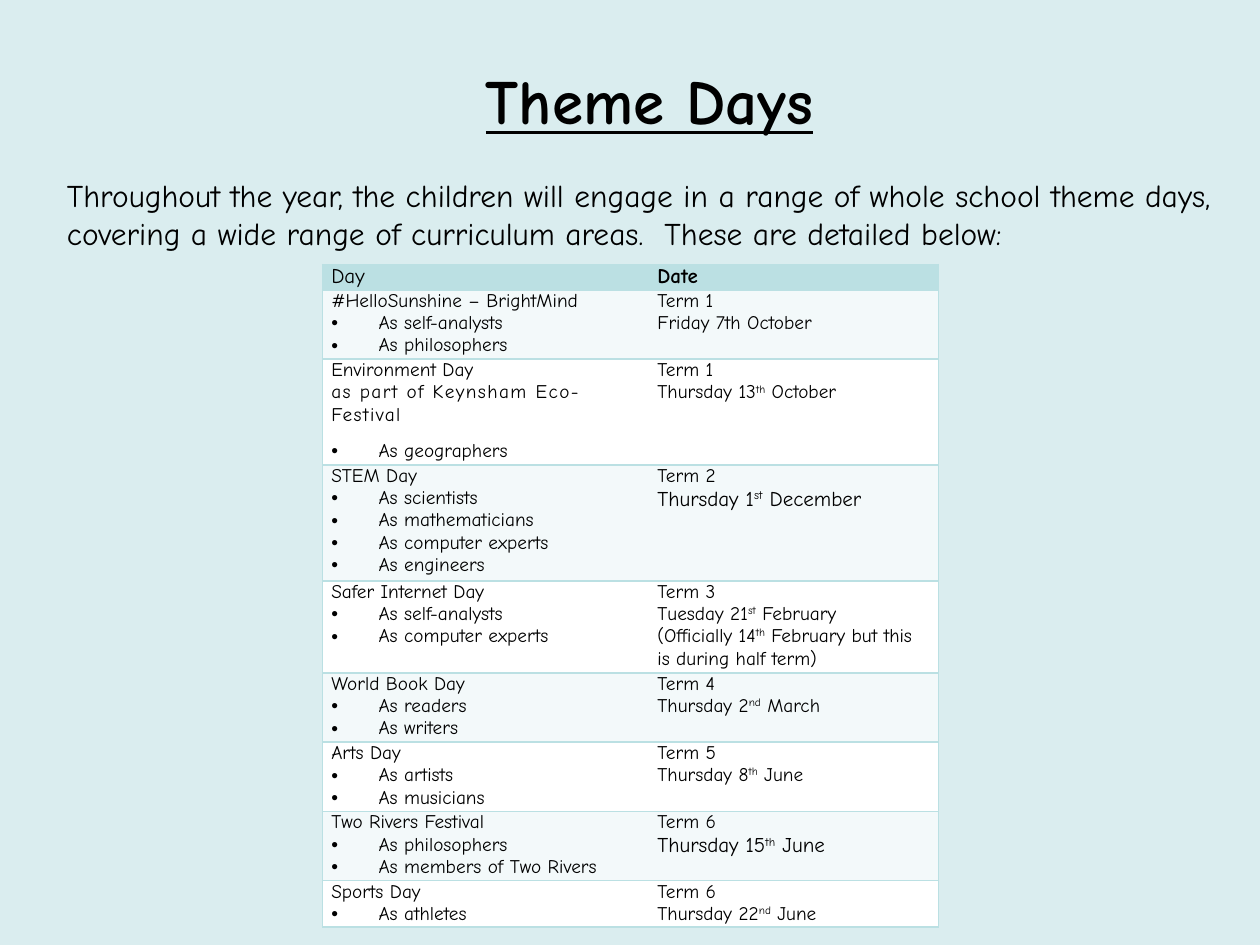
from pptx import Presentation
from pptx.util import Pt
from pptx.dml.color import RGBColor
from pptx.enum.text import MSO_ANCHOR, PP_ALIGN
from pptx.oxml.ns import qn
from lxml.etree import SubElement

FONT = "Comic Neue"
BLACK = RGBColor(0x00, 0x00, 0x00)
WHITE = RGBColor(0xFF, 0xFF, 0xFF)
PALE = RGBColor(0xDA, 0xED, 0xEF)
TEAL = RGBColor(0xBB, 0xE0, 0xE3)
MIST = RGBColor(0xF3, 0xF9, 0xFA)
PLAIN = "{2D5ABB26-0587-4C30-8999-92F81FD0307C}"

DAYS = [
    (14.4, ["Day"], ["Date"]),
    (39.6, ["#HelloSunshine – BrightMind", "•As self-analysts", "•As philosophers"],
     ["Term 1", "Friday 7th October"]),
    (60.48, ["Environment Day", "as part of Keynsham Eco-Festival", "•As geographers"],
     ["Term 1", "Thursday 13^th^ October"]),
    (66.24, ["STEM Day", "•As scientists", "•As mathematicians",
             "•As computer experts", "•As engineers"],
     ["Term 2", "Thursday 1^st^ December"]),
    (52.56, ["Safer Internet Day", "•As self-analysts", "•As computer experts"],
     ["Term 3", "Tuesday 21^st^ February",
      "(Officially 14^th^ February but this is during half term)"]),
    (39.6, ["World Book Day", "•As readers", "•As writers"],
     ["Term 4", "Thursday 2^nd^ March"]),
    (39.6, ["Arts Day", "•As artists", "•As musicians"],
     ["Term 5", "Thursday 8^th^ June"]),
    (39.6, ["Two Rivers Festival", "•As philosophers", "•As members of Two Rivers"],
     ["Term 6", "Thursday 15^th^ June"]),
    (26.64, ["Sports Day", "•As athletes"],
     ["Term 6", "Thursday 22^nd^ June"]),
]
LARGE = {"Day", "Date", "Thursday 1^st^ December", "Thursday 15^th^ June"}


def style(font, size, **extra):
    look = {"name": FONT, "size": Pt(size), "bold": False, **extra}
    for key, value in look.items():
        setattr(font, key, value)
    font.color.rgb = BLACK


def write(cell, lines):
    frame = cell.text_frame
    for n, line in enumerate(lines):
        para = frame.paragraphs[0] if n == 0 else frame.add_paragraph()
        para.space_before = Pt(0 if n else 2)
        if line.startswith("•"):
            props = para._p.get_or_add_pPr()
            props.set("marL", str(Pt(27)))
            props.set("indent", str(-Pt(27)))
            SubElement(props, qn("a:buFont"), typeface="Arial")
            SubElement(props, qn("a:buChar"), char="•")
        for k, part in enumerate(line.lstrip("•").split("^")):
            run = para.add_run()
            run.text = part
            style(run.font, 12 if line in LARGE else 11, bold=line == "Date")
            if k == 1:
                run.font._element.set("baseline", "30000")
            if line.startswith("as part"):
                run.font._element.set("spc", "80")
                para.space_after = Pt(8)


deck = Presentation()
deck.slide_width, deck.slide_height = Pt(720), Pt(540)
slide = deck.slides.add_slide(deck.slide_layouts[1])
slide.background.fill.solid()
slide.background.fill.fore_color.rgb = PALE

title, body = slide.placeholders
texts = [
    (title, 31.7, 50, "Theme Days", 36, PP_ALIGN.CENTER, True),
    (body, 96.8, 54, "Throughout the year, the children will engage in a range of "
     "whole school theme days, covering a wide range of curriculum areas.  "
     "These are detailed below:", 18, PP_ALIGN.LEFT, False),
]
for shape, top, high, words, size, align, head in texts:
    box = {"left": Pt(31), "top": Pt(top), "width": Pt(680.4), "height": Pt(high)}
    for key, value in box.items():
        setattr(shape, key, value)
    frame = shape.text_frame
    frame.text = words
    frame.vertical_anchor = MSO_ANCHOR.TOP
    frame.word_wrap = True
    para = frame.paragraphs[0]
    para.alignment = align
    para.space_before = Pt(0)
    style(para.runs[0].font, size, bold=head, underline=head)
    if not head:
        props = para._p.get_or_add_pPr()
        props.set("marL", "0")
        props.set("indent", "0")
        SubElement(props, qn("a:buNone"))

grid = slide.shapes.add_table(len(DAYS), 2, Pt(184.3), Pt(151.2), Pt(352), Pt(378.7))
table = grid.table
table.first_row = table.horz_banding = False
table._tbl.tblPr.find(qn("a:tableStyleId")).text = PLAIN
for col, wide in zip(table.columns, (186.4, 165.6)):
    col.width = Pt(wide)

inset = {"margin_left": Pt(5), "margin_right": Pt(5), "margin_top": 0, "margin_bottom": 0}
for r, (high, *sides) in enumerate(DAYS):
    table.rows[r].height = Pt(high)
    for c, lines in enumerate(sides):
        cell = table.cell(r, c)
        for key, value in inset.items():
            setattr(cell, key, value)
        props = cell._tc.get_or_add_tcPr()
        for edge in ("RTB" if c else "LTB"):
            line = SubElement(props, qn("a:ln" + edge), w=str(Pt(1)))
            fill = SubElement(line, qn("a:solidFill"))
            SubElement(fill, qn("a:srgbClr"), val=str(TEAL))
        cell.fill.solid()
        cell.fill.fore_color.rgb = TEAL if r == 0 else MIST if r % 2 else WHITE
        write(cell, lines)

deck.save("out.pptx")
